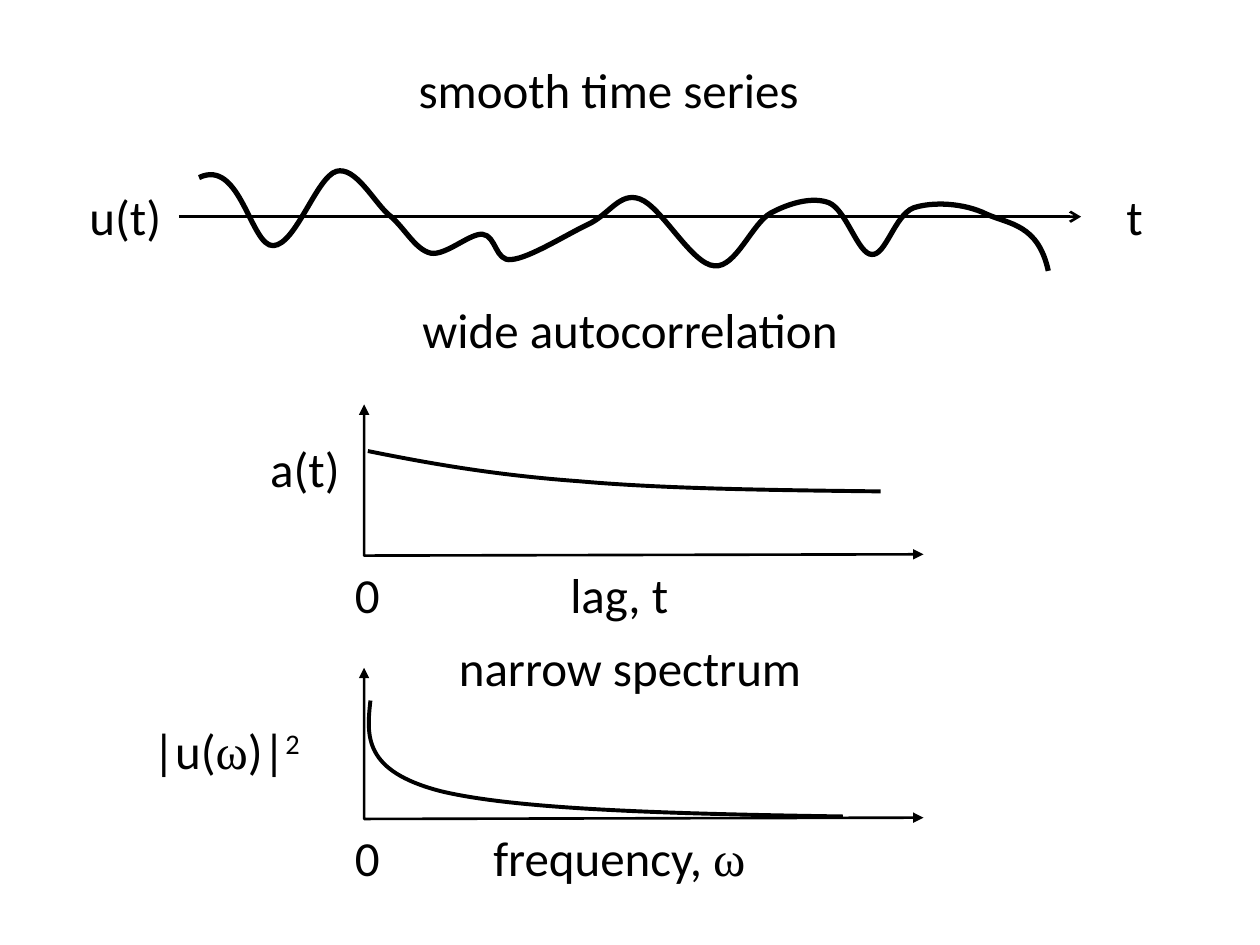
from lxml import etree
from pptx import Presentation
from pptx.dml.color import RGBColor
from pptx.enum.shapes import MSO_CONNECTOR
from pptx.enum.text import MSO_AUTO_SIZE, PP_ALIGN
from pptx.oxml.ns import qn
from pptx.util import Pt

PX = 9144  # EMU per px, 100 px to the inch
STRAIGHT = MSO_CONNECTOR.STRAIGHT
CENTER = PP_ALIGN.CENTER
GROW = MSO_AUTO_SIZE.SHAPE_TO_FIT_TEXT
COLORS = {"ink": "000000", "paper": "FFFFFF"}
SANS, SERIF = "Calibri", "Times New Roman"
OMEGA = ("ω", SERIF, 0)


class Sketch:
    """Holds the text and line style and the current slide."""

    size = 28
    label_height = 57

    def __init__(self, page):
        self.page = page
        self.ink = RGBColor.from_string(COLORS["ink"])
        page.background.fill.solid()
        page.background.fill.fore_color.rgb = RGBColor.from_string(COLORS["paper"])

    def label(self, left, top, width, *spans):
        """Centred text; a span is a string or (text, font, baseline)."""
        box = self.page.shapes.add_textbox(
            left * PX, top * PX, width * PX, self.label_height * PX)
        frame = box.text_frame
        frame.word_wrap = True
        frame.auto_size = GROW
        para = frame.paragraphs[0]
        para.alignment = CENTER
        for item in spans:
            text, font, baseline = (item, SANS, 0) if isinstance(item, str) else item
            span = para.add_run()
            span.text = text
            span.font.name = font
            span.font.size = Pt(self.size)
            span.font.color.rgb = self.ink
            if baseline:
                span.font._element.set("baseline", str(baseline * 1000))

    def stroke(self, shape, weight, **ends):
        """Line colour and weight, with arrowheads given as headEnd or tailEnd."""
        shape.line.color.rgb = self.ink
        shape.line.width = Pt(weight)
        outline = shape.line._get_or_add_ln()
        for end in ("headEnd", "tailEnd"):
            if end in ends:
                etree.SubElement(outline, qn(f"a:{end}"), type=ends[end])

    def arrow(self, start, stop, weight):
        line = self.page.shapes.add_connector(
            STRAIGHT, *(value * PX for value in start + stop))
        self.stroke(line, weight, tailEnd="arrow")
        etree.SubElement(line._element.spPr, qn("a:effectLst"))

    def polyline(self, points, weight, **ends):
        first, *rest = points
        builder = self.page.shapes.build_freeform(*first, scale=PX)
        builder.add_line_segments(rest, close=False)
        shape = builder.convert_to_shape()
        shape.fill.background()
        shape.shadow.inherit = False
        self.stroke(shape, weight, **ends)
        return shape

    def curve(self, points, weight):
        """Bezier curve: a start, then two controls and a knot per piece."""
        shape = self.polyline(points, weight)
        steps = list(shape._element.iter(qn("a:lnTo")))
        for index in range(0, len(steps), 3):
            piece = steps[index:index + 3]
            bezier = etree.Element(qn("a:cubicBezTo"))
            piece[0].addprevious(bezier)
            for step in piece:
                bezier.append(step[0])
                step.getparent().remove(step)

    def axes(self, top):
        """Vertical and horizontal axis of one plot, with its origin label."""
        self.polyline([(289, top), (289, top + 120), (733, top + 119)], 1.5,
                      headEnd="triangle", tailEnd="triangle")
        self.label(258, top + 122, 67, "0")


def main():
    deck = Presentation()
    deck.slide_width, deck.slide_height = 1000 * PX, 750 * PX
    sketch = Sketch(deck.slides.add_slide(deck.slide_layouts[6]))

    # Time series
    sketch.label(208, 42, 550, "smooth time series")
    sketch.arrow((142, 172), (858, 172), 1.5)
    sketch.label(867, 143, 67, "t")
    sketch.label(58, 143, 83, "u(t)")
    sketch.curve([
        (158, 141),
        (191, 125), (199, 196), (217, 195),
        (235, 194), (251, 141), (267, 136),
        (282, 132), (296, 159), (308, 170),
        (321, 180), (329, 198), (342, 201),
        (354, 203), (373, 185), (383, 186),
        (394, 187), (393, 208), (406, 206),
        (420, 205), (450, 186), (467, 178),
        (484, 170), (492, 152), (508, 158),
        (525, 164), (549, 210), (567, 211),
        (584, 213), (597, 177), (612, 169),
        (627, 161), (645, 156), (658, 161),
        (672, 167), (681, 202), (692, 202),
        (703, 203), (710, 171), (725, 165),
        (740, 160), (765, 161), (783, 170),
        (801, 178), (824, 178), (832, 215),
    ], 3)

    # Autocorrelation
    sketch.label(225, 233, 550, "wide autocorrelation")
    sketch.axes(321)
    sketch.label(192, 343, 100, "a(t)")
    sketch.label(358, 443, 267, "lag, t")
    sketch.curve([
        (292, 358),
        (342, 368), (392, 377), (460, 382),
        (528, 388), (614, 389), (699, 390),
    ], 2.25)

    # Spectrum
    sketch.label(225, 501, 550, "narrow spectrum")
    sketch.axes(530)
    sketch.label(92, 567, 175, "|u(", OMEGA, ")|", ("2", SANS, 30))
    sketch.label(358, 652, 267, "frequency, ", OMEGA)
    sketch.curve([
        (294, 556),
        (291, 584), (288, 612), (350, 628),
        (412, 643), (540, 646), (669, 648),
    ], 2.25)

    deck.save("out.pptx")


if __name__ == "__main__":
    main()
